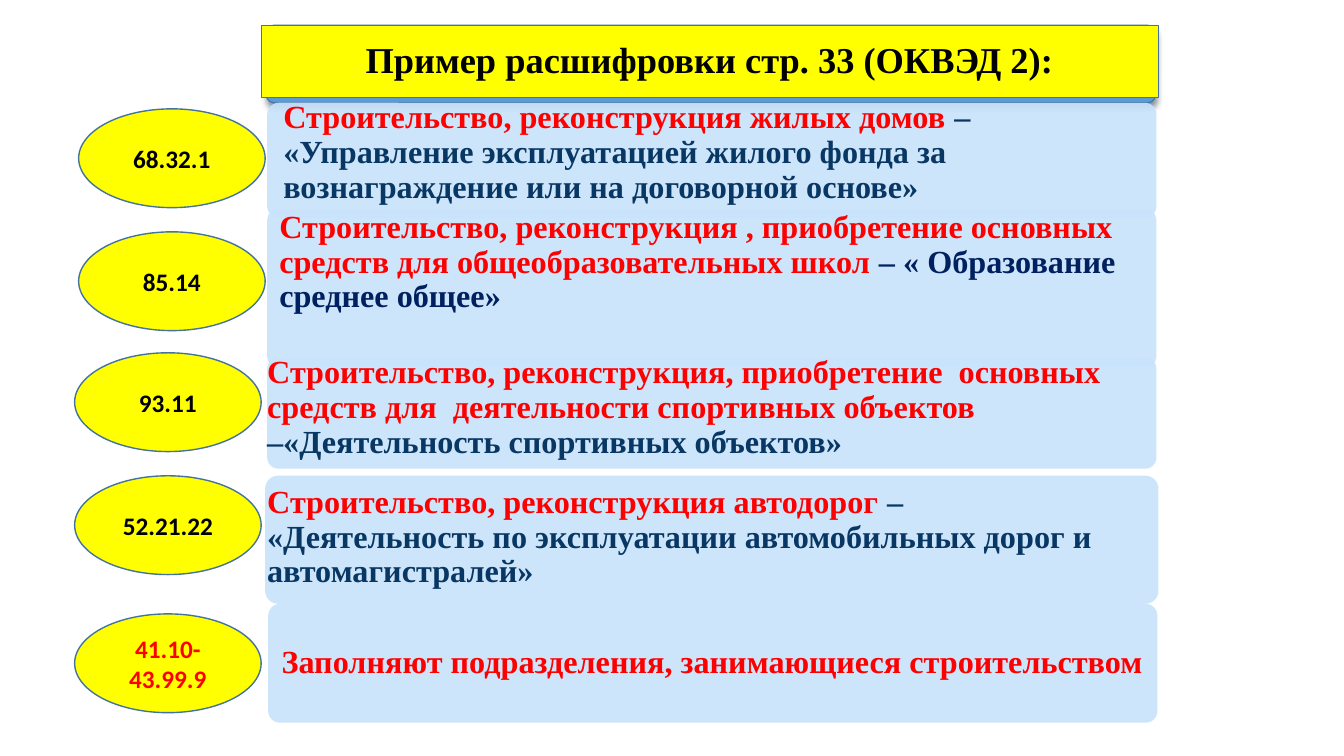
import pptx
import pptx.dml.color
import pptx.enum.shapes
import pptx.enum.text
import pptx.oxml
import pptx.oxml.ns
import pptx.util
from dataclasses import dataclass

SHAPE = pptx.enum.shapes.MSO_SHAPE
ALIGN = pptx.enum.text.PP_ALIGN
ANCHOR = pptx.enum.text.MSO_ANCHOR

TITLE = "Пример расшифровки стр. 33 (ОКВЭД 2):"

# Each row: code, code colour, works, activity lines, activity colour
ROWS = [
    ("68.32.1", "black", "Строительство, реконструкция жилых домов ",
     ["– ", "«Управление эксплуатацией жилого фонда за вознаграждение или на договорной основе»"],
     "navy"),
    ("85.14", "black",
     "Строительство, реконструкция , приобретение основных средств для общеобразовательных школ ",
     ["– « Образование среднее общее»"], "indigo"),
    ("93.11", "black",
     "Строительство, реконструкция, приобретение  основных средств для  деятельности спортивных объектов ",
     ["–«Деятельность спортивных объектов»"], "navy"),
    ("52.21.22", "black", "Строительство, реконструкция автодорог ",
     ["– ", "«Деятельность по эксплуатации автомобильных дорог и автомагистралей»"], "navy"),
    ("41.10-43.99.9", "red", "Заполняют подразделения, занимающиеся строительством", [], "navy"),
]


@dataclass(frozen=True)
class Theme:
    black: str = "000000"
    red: str = "FF0000"
    navy: str = "083763"
    indigo: str = "002060"
    yellow: str = "FFFF00"
    blue: str = "5B9BD5"
    outline: str = "43739E"
    card: str = "C8E3FB"
    shadow: str = "031D35"
    serif: str = "Times New Roman"
    sans: str = "Calibri"
    title_size: float = 26
    text_size: float = 23
    code_size: float = 18


THEME = Theme()

# Columns and rows of the page, in inches: left, top, width, height
SLIDE_SIZE = (13.33, 7.5)
TITLE_BOX = (2.59, 0.25, 8.9, 0.72)
TITLE_BACK = (2.64, 0.25, 8.82, 0.77)
CARD_BOXES = [(2.65, 1.02, 8.82, 1.14), (2.65, 2.08, 8.82, 1.56), (2.65, 3.55, 8.82, 1.1),
              (2.63, 4.72, 8.86, 1.27), (2.66, 5.99, 8.82, 1.18)]
CARD_CORNERS = [0.1, 0.063, 0.1, 0.1, 0.1]
TEXT_BOXES = [(2.76, 0.97, 8.82, 1.1), (2.72, 2.06, 8.82, 1.26), (2.6, 3.71, 8.77, 0.68),
              (2.6, 4.57, 8.86, 1.53), None]
TEXT_ANCHORS = [ANCHOR.MIDDLE, ANCHOR.TOP, ANCHOR.MIDDLE, ANCHOR.MIDDLE, ANCHOR.MIDDLE]
CODE_SIZE = (1.85, 0.98)
CODE_CORNERS = [(0.78, 1.08), (0.78, 2.3), (0.74, 3.5), (0.74, 4.72), (0.74, 6.09)]


def inches(values):
    return [pptx.util.Inches(value) for value in values]


def rgb(colour):
    return pptx.dml.color.RGBColor.from_string(colour)


def paint(shape, fill, line_width=None):
    shape.fill.solid()
    shape.fill.fore_color.rgb = rgb(fill)
    if line_width is None:
        shape.line.fill.background()
    else:
        shape.line.color.rgb = rgb(THEME.outline)
        shape.line.width = pptx.util.Pt(line_width)


def add_shape(page, kind, box, fill, line_width=None):
    shape = page.shapes.add_shape(kind, *inches(box))
    shape.shadow.inherit = False
    paint(shape, fill, line_width)
    return shape


def set_frame(frame, anchor, margins=None):
    frame.word_wrap = True
    frame.auto_size = pptx.enum.text.MSO_AUTO_SIZE.NONE
    frame.vertical_anchor = anchor
    if margins:
        side, end = inches(margins)
        frame.margin_left = frame.margin_right = side
        frame.margin_top = frame.margin_bottom = end


def style(span, font, size, colour):
    span.font.name = font
    span.font.size = pptx.util.Pt(size)
    span.font.bold = True
    span.font.color.rgb = rgb(colour)


def drop_shadow(shape):
    effects = shape.element.spPr.find(pptx.oxml.ns.qn("a:effectLst"))
    effects.append(pptx.oxml.parse_xml(
        f'<a:outerShdw {pptx.oxml.ns.nsdecls("a")} blurRad="57150" dist="38100" dir="5400000"'
        f' algn="ctr" rotWithShape="0"><a:srgbClr val="{THEME.shadow}">'
        '<a:alpha val="48000"/></a:srgbClr></a:outerShdw>'))


def add_title(page):
    title = page.shapes.title
    title.left, title.top, title.width, title.height = inches(TITLE_BOX)
    paint(title, THEME.yellow, 0.75)
    set_frame(title.text_frame, ANCHOR.MIDDLE, (0.05, 0.04))
    title.text_frame.text = TITLE
    para = title.text_frame.paragraphs[0]
    para.alignment = ALIGN.CENTER
    para.line_spacing = 0.9
    style(para.runs[0], THEME.serif, THEME.title_size, THEME.black)

    back = add_shape(page, SHAPE.ROUNDED_RECTANGLE, TITLE_BACK, THEME.blue, 0.75)
    back.adjustments[0] = 0.1
    drop_shadow(back)
    title.element.addprevious(back.element)


def add_card(page, box, corner):
    card = add_shape(page, SHAPE.ROUNDED_RECTANGLE, box, THEME.card)
    card.adjustments[0] = corner
    colour = card.element.spPr.find(".//" + pptx.oxml.ns.qn("a:srgbClr"))
    colour.append(pptx.oxml.parse_xml(
        f'<a:alpha {pptx.oxml.ns.nsdecls("a")} val="90000"/>'))
    return card


def write_works(para, works, activity, colour):
    """Fill one paragraph with the works in red and the activity after them."""
    para.alignment = ALIGN.LEFT
    para.line_spacing = 0.9
    para.text = works
    style(para.runs[0], THEME.serif, THEME.text_size, THEME.red)
    for number, line in enumerate(activity):
        if number:
            para.add_line_break()
        span = para.add_run()
        span.text = line
        style(span, THEME.serif, THEME.text_size, colour)


def add_code(page, corner, code, colour):
    badge = add_shape(page, SHAPE.OVAL, corner + CODE_SIZE, THEME.yellow, 1)
    set_frame(badge.text_frame, ANCHOR.MIDDLE)
    badge.text_frame.text = code
    para = badge.text_frame.paragraphs[0]
    para.alignment = ALIGN.CENTER
    style(para.runs[0], THEME.sans, THEME.code_size, colour)


def main():
    deck = pptx.Presentation()
    deck.slide_width, deck.slide_height = inches(SLIDE_SIZE)
    page = deck.slides.add_slide(deck.slide_layouts[5])
    add_title(page)
    places = zip(ROWS, CARD_BOXES, CARD_CORNERS, TEXT_BOXES, TEXT_ANCHORS, CODE_CORNERS)
    for row, card_box, card_corner, text_box, anchor, code_corner in places:
        code, code_colour, works, activity, colour = row
        holder = add_card(page, card_box, card_corner)
        margins = None
        if text_box:
            holder = page.shapes.add_textbox(*inches(text_box))
            margins = (0.05, 0.03)
        set_frame(holder.text_frame, anchor, margins)
        write_works(holder.text_frame.paragraphs[0], works, activity, getattr(THEME, colour))
        add_code(page, code_corner, code, getattr(THEME, code_colour))
    deck.save("out.pptx")


if __name__ == "__main__":
    main()
